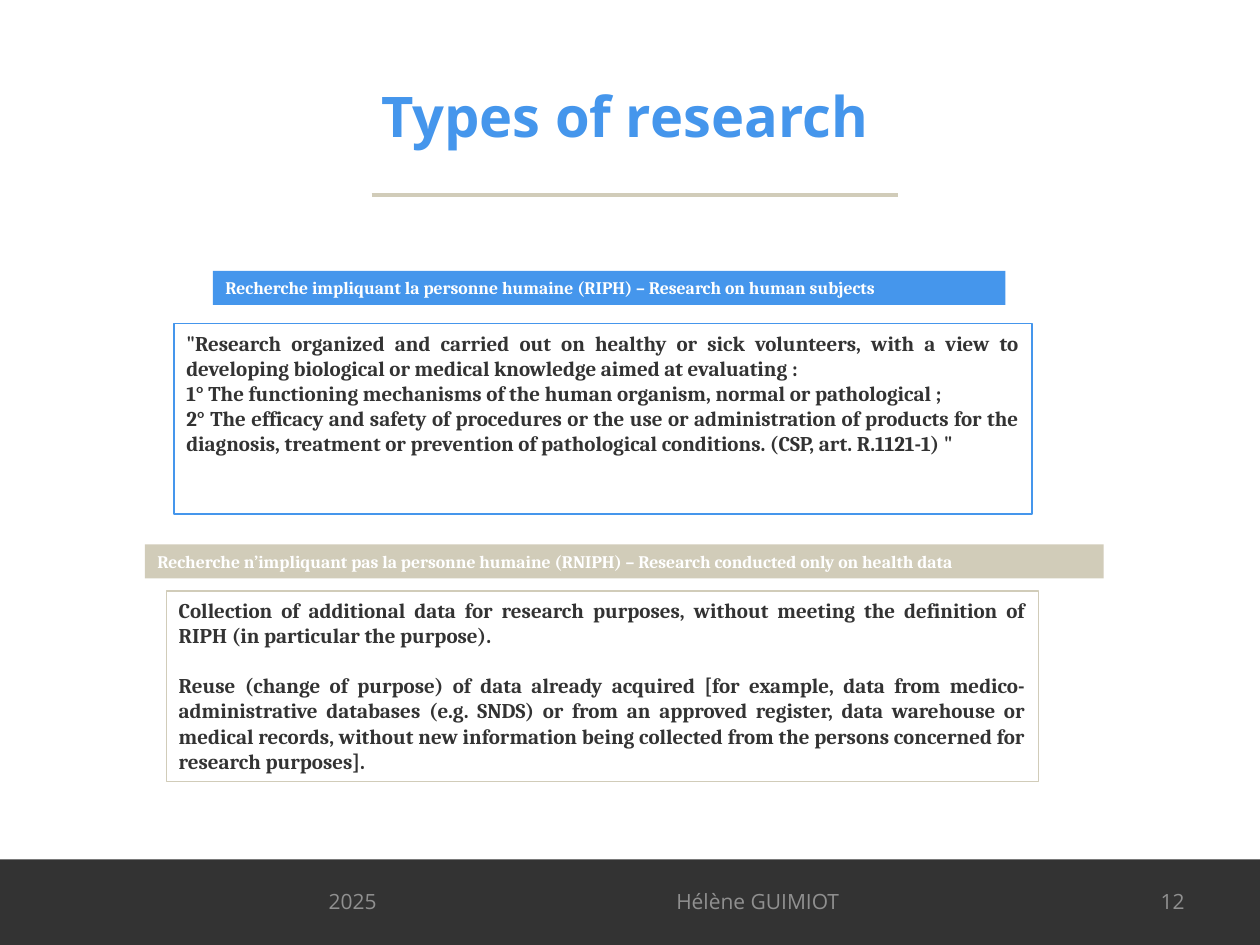
from pptx import Presentation
from pptx.dml.color import RGBColor
from pptx.enum.shapes import MSO_CONNECTOR, MSO_SHAPE
from pptx.enum.text import MSO_ANCHOR, PP_ALIGN
from pptx.oxml.ns import qn
from pptx.util import Inches, Pt
from lxml import etree

LEFT, CENTER, RIGHT, JUSTIFY = PP_ALIGN.LEFT, PP_ALIGN.CENTER, PP_ALIGN.RIGHT, PP_ALIGN.JUSTIFY
TOP, MIDDLE = MSO_ANCHOR.TOP, MSO_ANCHOR.MIDDLE
RECTANGLE, STRAIGHT = MSO_SHAPE.RECTANGLE, MSO_CONNECTOR.STRAIGHT
COLUMNS, ROWS = 100, 75
WIDTH, HEIGHT = Inches(10), Inches(7.5)
BLUE, SAND, DARK, GREY, WHITE = "4596EC", "D1CCB9", "333333", "909090", "FFFFFF"
HEADING_FONT, BODY_FONT = "Open Sans", "Cambria"

SECTIONS = [
    {
        "color": BLUE,
        "bar": (16.9, 21.5, 62.9, 2.7),
        "body": (13.8, 25.7, 68.1, 15.1),
        "heading": "Recherche impliquant la personne humaine (RIPH) – Research on human subjects",
        "gap": 0,
        "lines": [
            "\"Research organized and carried out on healthy or sick volunteers, with a view to "
            "developing biological or medical knowledge aimed at evaluating :",
            "1° The functioning mechanisms of the human organism, normal or pathological ;",
            "2° The efficacy and safety of procedures or the use or administration of products for "
            "the diagnosis, treatment or prevention of pathological conditions. "
            "(CSP, art. R.1121-1) \"",
        ],
    },
    {
        "color": SAND,
        "bar": (11.5, 43.2, 76.1, 2.7),
        "body": (13.2, 46.9, 69.2, 15.1),
        "heading": "Recherche n’impliquant pas la personne humaine (RNIPH) – "
                   "Research conducted only on health data",
        "gap": 14.4,
        "lines": [
            "Collection of additional data for research purposes, without meeting the definition "
            "of RIPH (in particular the purpose).",
            "Reuse (change of purpose) of data already acquired [for example, data from "
            "medico-administrative databases (e.g. SNDS) or from an approved register, data "
            "warehouse or medical records, without new information being collected from the "
            "persons concerned for research purposes].",
        ],
    },
]


def rgb(code):
    """Turn a hex string into a colour."""
    return RGBColor.from_string(code)


def place(left, top, width, height):
    """Convert a box in grid columns and rows to slide lengths."""
    across, down = WIDTH / COLUMNS, HEIGHT / ROWS
    return [round(n) for n in (left * across, top * down, width * across, height * down)]


def write(shape, lines, size, color, font, bold=False, align=LEFT, anchor=MIDDLE, gap=0):
    """Fill a shape with one styled paragraph per line."""
    frame = shape.text_frame
    frame.word_wrap = True
    frame.vertical_anchor = anchor
    for index, line in enumerate(lines):
        para = frame.add_paragraph() if index else frame.paragraphs[0]
        para.alignment = align
        if index:
            para.space_before = Pt(gap)
        span = para.add_run()
        span.text = line
        span.font.size = Pt(size)
        span.font.name = font
        span.font.bold = bold
        span.font.color.rgb = rgb(color)


def add_panel(page, box, fill=None, outline=None):
    """Add a flat rectangle with an optional fill and outline."""
    panel = page.shapes.add_shape(RECTANGLE, *place(*box))
    panel.shadow.inherit = False
    if fill:
        panel.fill.solid()
        panel.fill.fore_color.rgb = rgb(fill)
    else:
        panel.fill.background()
    if outline:
        panel.line.color.rgb = rgb(outline)
        panel.line.width = Pt(0.75)
    else:
        panel.line.fill.background()
    return panel


def add_header(page, box):
    """Set the title in its box, with a rule below it."""
    title = page.shapes.title
    title.left, title.top, title.width, title.height = place(*box)
    write(title, ["Types of research"], 32, BLUE, HEADING_FONT, bold=True, align=CENTER)
    left, top, width, _ = place(29.5, box[1] + box[3] + 0.9, 41.8, 0)
    rule = page.shapes.add_connector(STRAIGHT, left, top, left + width, top)
    rule.line.color.rgb = rgb(SAND)
    rule.line.width = Pt(2.25)
    etree.SubElement(rule._element.spPr, qn("a:effectLst"))


def add_section(page, section):
    """Add a coloured heading bar and its outlined definition."""
    body = add_panel(page, section["body"], outline=section["color"])
    write(body, section["lines"], 12, DARK, BODY_FONT, bold=True,
          align=JUSTIFY, anchor=TOP, gap=section["gap"])
    bar = add_panel(page, section["bar"], fill=section["color"])
    write(bar, [section["heading"]], 10.1, WHITE, BODY_FONT, bold=True)


def add_footer(page, box):
    """Add the dark band with date, author and page number."""
    add_panel(page, box, fill=DARK)
    entries = [("2025", 25.1, 23.3, LEFT), ("Hélène GUIMIOT", 44.3, 31.7, CENTER),
               ("12", 71.7, 23.3, RIGHT)]
    for text, left, width, align in entries:
        label = page.shapes.add_textbox(*place(left, box[1] + 1.3, width, 4))
        write(label, [text], 12, GREY, HEADING_FONT, align=align)


def main():
    """Build and save the slide."""
    deck = Presentation()
    deck.slide_width, deck.slide_height = WIDTH, HEIGHT
    page = deck.slides.add_slide(deck.slide_layouts[5])
    add_footer(page, (0, 68.2, COLUMNS, 6.8))
    add_header(page, (13, 3.6, 73.2, 11))
    for section in SECTIONS:
        add_section(page, section)
    deck.save("out.pptx")


if __name__ == "__main__":
    main()
